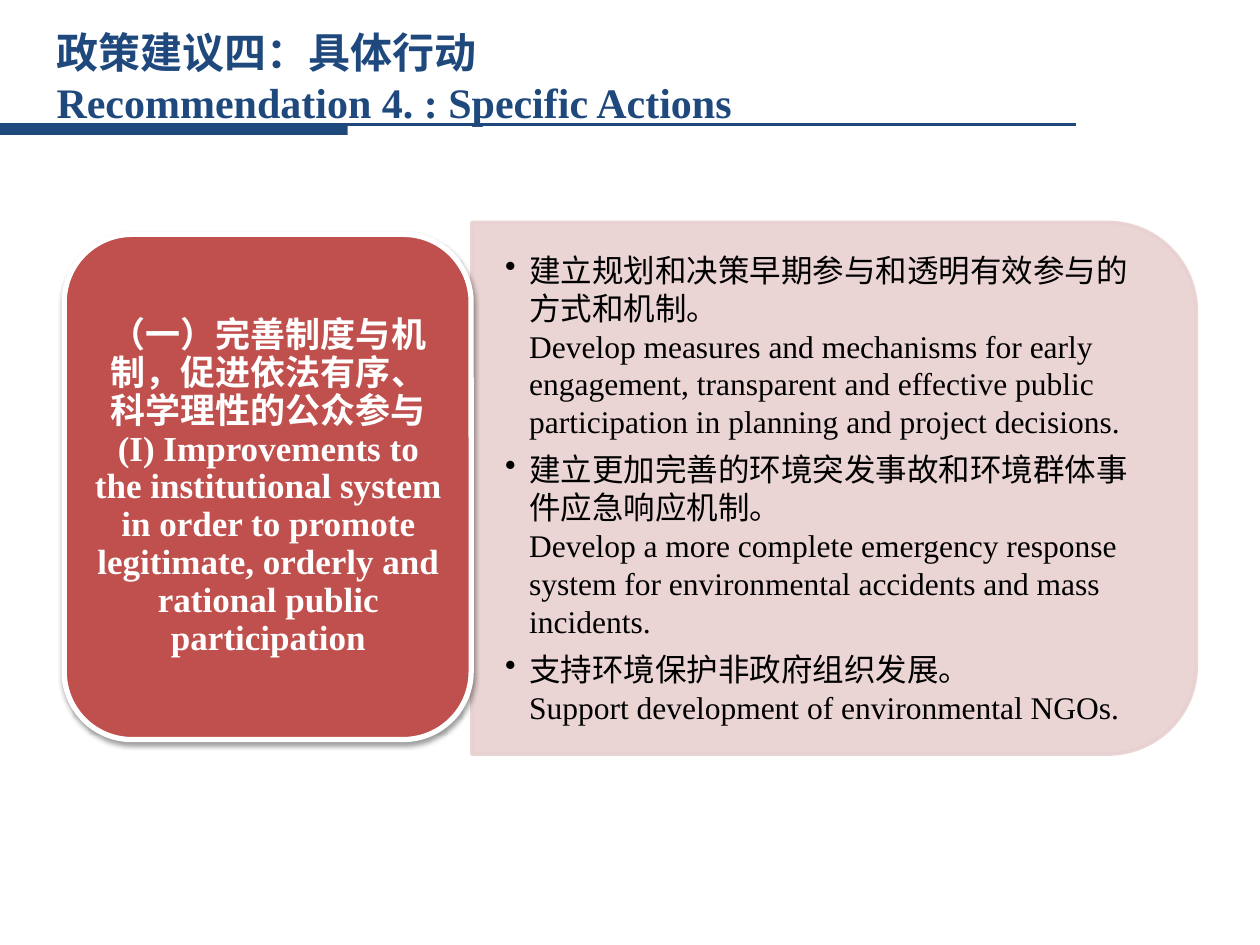
import pptx
import pptx.util
import pptx.dml.color
import pptx.enum.shapes
import pptx.enum.text
import pptx.oxml
import pptx.oxml.ns
from dataclasses import dataclass

Inches = pptx.util.Inches
Pt = pptx.util.Pt
Shape = pptx.enum.shapes.MSO_SHAPE
Align = pptx.enum.text.PP_ALIGN


@dataclass(frozen=True)
class Theme:
    navy: str = "1F497D"
    red: str = "C0504D"
    pink: str = "E8D0D0"
    white: str = "FFFFFF"
    black: str = "000000"
    body_font: str = "Times New Roman"
    title_font: str = "Calibri"
    title_size: int = 24
    heading_size: int = 20
    body_size: int = 18


def rgb(value):
    return pptx.dml.color.RGBColor.from_string(value)


def add_xml(parent, tag, **attributes):
    element = pptx.oxml.parse_xml(f"<a:{tag} {pptx.oxml.ns.nsdecls('a')}/>")
    for name, value in attributes.items():
        element.set(name, str(value))
    parent.append(element)
    return element


class SlideBuilder:
    def __init__(self, slide, theme):
        self.slide = slide
        self.theme = theme

    def rule(self, start, end, color, width):
        line = self.slide.shapes.add_connector(
            pptx.enum.shapes.MSO_CONNECTOR.STRAIGHT, *map(Inches, start + end))
        line.line.color.rgb = rgb(color)
        line.line.width = Pt(width)
        add_xml(line._element.spPr, "effectLst")

    def panel(self, kind, place, fill, border=None, width=0, rotation=0, opacity=100):
        box = self.slide.shapes.add_shape(kind, *map(Inches, place))
        box.rotation = rotation
        box.shadow.inherit = False
        box.fill.solid()
        box.fill.fore_color.rgb = rgb(fill)
        if border:
            box.line.color.rgb = rgb(border)
            box.line.width = Pt(width)
        else:
            box.line.fill.background()
        if opacity < 100:
            for color in box._element.spPr.iter(pptx.oxml.ns.qn("a:srgbClr")):
                add_xml(color, "alpha", val=opacity * 1000)
        return box

    def drop_shadow(self, box, color, opacity, blur, distance):
        effects = box._element.spPr.find(pptx.oxml.ns.qn("a:effectLst"))
        shadow = add_xml(effects, "outerShdw", blurRad=Pt(blur), dist=Pt(distance),
                         dir=90 * 60000, rotWithShape=0)
        shade = add_xml(shadow, "srgbClr", val=color)
        add_xml(shade, "alpha", val=opacity * 1000)

    def text(self, place, texts, size, color, fonts, insets=(0.1, 0.05), bold=False,
             align=Align.LEFT, spacing=None, after=0, bullet_indent=0):
        frame = self.slide.shapes.add_textbox(*map(Inches, place)).text_frame
        frame.word_wrap = True
        frame.vertical_anchor = pptx.enum.text.MSO_ANCHOR.MIDDLE
        frame.margin_left = frame.margin_right = Inches(insets[0])
        frame.margin_top = frame.margin_bottom = Inches(insets[1])
        for index, (content, font) in enumerate(zip(texts, fonts)):
            para = frame.add_paragraph() if index else frame.paragraphs[0]
            para.text = content
            para.alignment = align
            para.line_spacing = spacing
            para.space_after = Pt(after)
            if bullet_indent:
                properties = para._p.get_or_add_pPr()
                properties.set("marL", str(Inches(bullet_indent)))
                properties.set("indent", str(-Inches(bullet_indent)))
                add_xml(properties, "buChar", char="•")
            for span in para.runs:
                span.font.name = font
                span.font.size = Pt(size)
                span.font.bold = bold
                span.font.color.rgb = rgb(color)


def main():
    deck = pptx.Presentation()
    deck.slide_width, deck.slide_height = Inches(10), Inches(7.5)
    theme = Theme()
    page = SlideBuilder(deck.slides.add_slide(deck.slide_layouts[6]), theme)

    page.rule((0, 0.99), (8.54, 0.99), theme.navy, 1.5)
    page.panel(Shape.RECTANGLE, (0, 0.99, 2.76, 0.08), theme.navy)

    page.panel(Shape.ROUND_2_SAME_RECTANGLE, (4.51, 1, 4.22, 5.75), theme.pink,
               theme.pink, 2, rotation=90, opacity=90)
    actions = [
        "建立规划和决策早期参与和透明有效参与的方式和机制。\n"
        "Develop measures and mechanisms for early engagement, transparent and "
        "effective public participation in planning and project decisions.",
        "建立更加完善的环境突发事故和环境群体事件应急响应机制。\n"
        "Develop a more complete emergency response system for environmental "
        "accidents and mass incidents.",
        "支持环境保护非政府组织发展。\nSupport development of environmental NGOs.",
    ]
    page.text((3.74, 1.97, 5.54, 3.81), actions, theme.body_size, theme.black,
              [theme.body_font] * len(actions), insets=(0.27, 0.14), after=6,
              bullet_indent=0.19)

    card = page.panel(Shape.ROUNDED_RECTANGLE, (0.51, 1.86, 3.23, 4.01), theme.red,
                      theme.white, 3)
    page.drop_shadow(card, theme.black, 38, 3.1, 1.6)
    heading = ("（一）完善制度与机制，促进依法有序、科学理性的公众参与\n"
               "(I) Improvements to the institutional system in order to promote "
               "legitimate, orderly and rational public participation")
    page.text((0.67, 2.02, 2.92, 3.7), [heading], theme.heading_size, theme.white,
              [theme.body_font], insets=(0.08, 0.04), bold=True, align=Align.CENTER,
              spacing=0.9)

    page.text((0.35, 0.3, 8.35, 0.62),
              ["政策建议四：具体行动", "Recommendation 4. : Specific Actions"],
              theme.title_size, theme.navy, [theme.title_font, theme.body_font], bold=True)

    deck.save("out.pptx")


if __name__ == "__main__":
    main()
